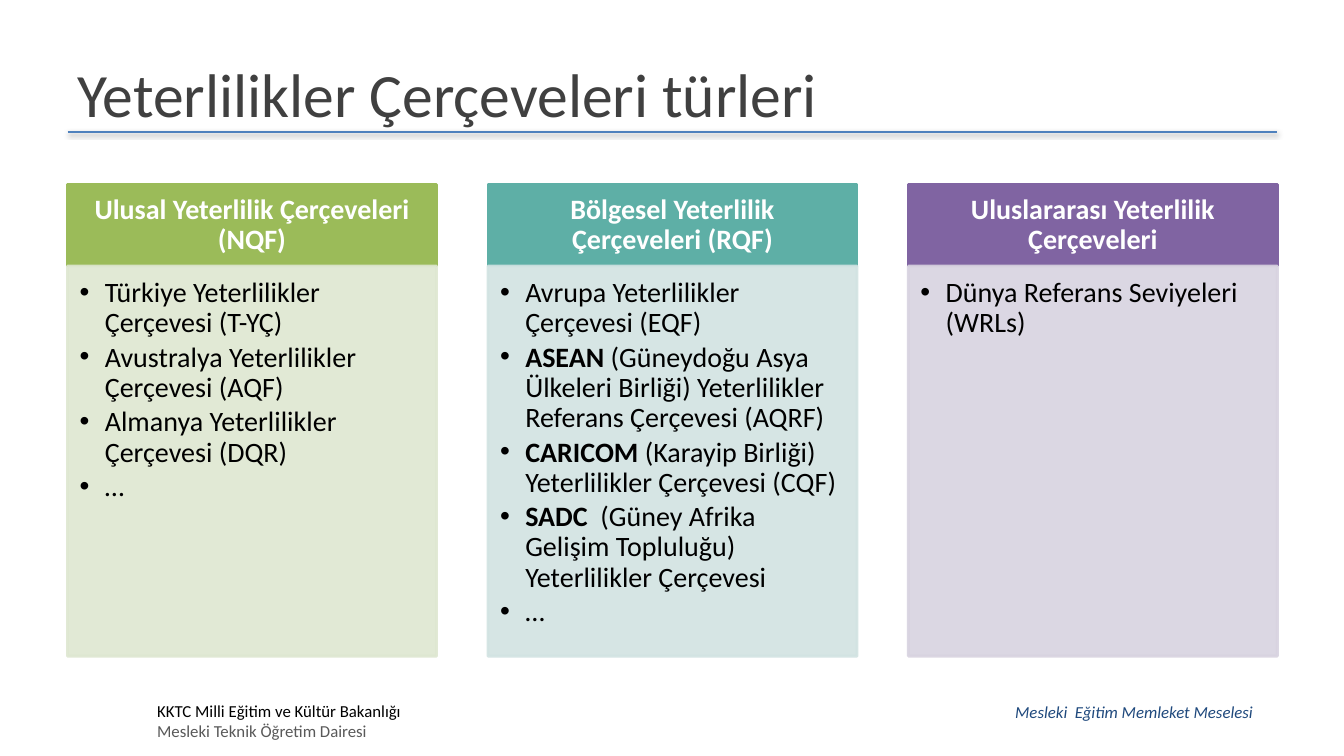
from dataclasses import dataclass

from lxml.etree import SubElement as sub
from pptx import Presentation
from pptx.dml.color import RGBColor as RGB
from pptx.enum.shapes import MSO_CONNECTOR as LINE, MSO_SHAPE as FORM
from pptx.enum.text import MSO_ANCHOR as ANCHOR, MSO_AUTO_SIZE as AUTO, PP_ALIGN as ALIGN
from pptx.oxml.ns import qn
from pptx.util import Emu, Inches, Pt

FONT = "Calibri"
HUES = {
    "title": "404040", "rule": "4F81BD", "motto": "1F497D",
    "black": "000000", "grey": "595959", "white": "FFFFFF",
    "green": "9BBB59", "pale green": "DEE7D1",
    "teal": "5EAFA6", "pale teal": "D2E3E2",
    "violet": "8064A2", "pale violet": "D8D3E0",
}

# Grid: three columns, a head row over a body row
LEFT, WIDE, STEP = 0.67, 3.66, 4.17
TOP, HEAD, BODY = 1.83, 0.81, 3.87


@dataclass
class Group:
    hue: str
    head: str
    items: list[str]  # the part before "|" is bold


@dataclass
class Note:
    box: tuple[float, float, float, float]
    lines: list[tuple[str, str]]  # text, colour
    slant: bool = False


GROUPS = [
    Group("green", "Ulusal Yeterlilik Çerçeveleri (NQF)", [
        "Türkiye Yeterlilikler Çerçevesi (T-YÇ)",
        "Avustralya Yeterlilikler Çerçevesi (AQF)",
        "Almanya Yeterlilikler Çerçevesi (DQR)",
        "…",
    ]),
    Group("teal", "Bölgesel Yeterlilik Çerçeveleri (RQF)", [
        "Avrupa Yeterlilikler Çerçevesi (EQF)",
        "ASEAN| (Güneydoğu Asya Ülkeleri Birliği) Yeterlilikler Referans Çerçevesi (AQRF)",
        "CARICOM| (Karayip Birliği) Yeterlilikler Çerçevesi (CQF)",
        "SADC  |(Güney Afrika Gelişim Topluluğu) Yeterlilikler Çerçevesi",
        "…",
    ]),
    Group("violet", "Uluslararası Yeterlilik Çerçeveleri", [
        "Dünya Referans Seviyeleri (WRLs)",
    ]),
]
NOTES = [
    Note((9.97, 6.91, 2.75, 0.3), [("Mesleki  Eğitim Memleket Meselesi", "motto")], True),
    Note((1.46, 6.9, 3.79, 0.5), [("KKTC Milli Eğitim ve Kültür Bakanlığı", "black"),
                                  ("Mesleki Teknik Öğretim Dairesi", "grey")]),
]


def color(name: str) -> RGB:
    return RGB.from_string(HUES[name])


def style(font, size: float, hue: str, bold: bool = False, slant: bool = False) -> None:
    font.name, font.size, font.bold, font.italic = FONT, Pt(size), bold, slant
    font.color.rgb = color(hue)


def panel(slide, box: tuple, hue: str, pads: tuple, alpha: int = 100):
    """Draw a filled rectangle and return it."""
    shape = slide.shapes.add_shape(FORM.RECTANGLE, *map(Inches, box))
    shape.shadow.inherit = False
    shape.line.width = Pt(2)
    for fill in (shape.fill, shape.line.fill):
        fill.solid()
        fill.fore_color.rgb = color(hue)
    if alpha < 100:
        for tone in shape._element.spPr.iter(qn("a:srgbClr")):
            sub(tone, qn("a:alpha"), val=str(alpha * 1000))
    frame = shape.text_frame
    frame.word_wrap = True
    (frame.margin_left, frame.margin_top,
     frame.margin_right, frame.margin_bottom) = map(Inches, pads)
    return shape


def bullet(para, item: str) -> None:
    props = para._p.get_or_add_pPr()
    props.set("marL", str(Inches(0.25)))
    props.set("indent", str(-Inches(0.25)))
    sub(props, qn("a:buFont"), typeface="Arial")
    sub(props, qn("a:buChar"), char="•")
    para.alignment, para.line_spacing, para.space_after = ALIGN.LEFT, 0.9, Pt(3)
    lead, _, rest = item.rpartition("|")
    for text, bold in ((lead, True), (rest, False)):
        if text:
            run = para.add_run()
            run.text = text
            style(run.font, 20, "black", bold)


def column(slide, at: int, group: Group) -> None:
    left = LEFT + at * STEP
    # Head
    head = panel(slide, (left, TOP, WIDE, HEAD), group.hue, (0.16, 0.09, 0.16, 0.09))
    frame = head.text_frame
    frame.vertical_anchor = ANCHOR.MIDDLE
    frame.text = group.head
    para = frame.paragraphs[0]
    para.alignment, para.line_spacing = ALIGN.CENTER, 0.9
    style(para.runs[0].font, 20, "white", True)
    # Body
    body = panel(slide, (left, TOP + HEAD, WIDE, BODY), f"pale {group.hue}",
                 (0.12, 0.12, 0.16, 0.17), 90)
    frame = body.text_frame
    frame.vertical_anchor = ANCHOR.TOP
    for i, item in enumerate(group.items):
        bullet(frame.add_paragraph() if i else frame.paragraphs[0], item)


def rule(slide) -> None:
    ends = map(Inches, (LEFT, 1.31, LEFT + 2 * STEP + WIDE, 1.31))
    line = slide.shapes.add_connector(LINE.STRAIGHT, *ends)
    line.line.width = Pt(2)
    line.line.color.rgb = color("rule")
    # Soft shadow below the line
    glow = sub(sub(line._element.spPr, qn("a:effectLst")), qn("a:outerShdw"),
               blurRad=str(Pt(3.1)), dist=str(Pt(1.6)), dir="5400000", rotWithShape="0")
    tone = sub(glow, qn("a:srgbClr"), val=HUES["black"])
    sub(tone, qn("a:alpha"), val="38000")


def label(slide, note: Note) -> None:
    frame = slide.shapes.add_textbox(*map(Inches, note.box)).text_frame
    frame.word_wrap = True
    frame.auto_size = AUTO.SHAPE_TO_FIT_TEXT
    frame.text = "\n".join(text for text, _ in note.lines)
    for para, (_, hue) in zip(frame.paragraphs, note.lines):
        style(para.runs[0].font, 12, hue, slant=note.slant)


def main() -> None:
    deck = Presentation()
    deck.slide_width, deck.slide_height = Inches(13.33), Inches(7.5)
    slide = deck.slides.add_slide(deck.slide_layouts[5])

    # Title, centred in 90 % of the slide's width
    title = slide.shapes.title
    title.left, title.width = Emu(int(deck.slide_width * 0.05)), Emu(int(deck.slide_width * 0.9))
    title.top, title.height = Inches(0.3), Inches(1.25)
    frame = title.text_frame
    frame.text = "Yeterlilikler Çerçeveleri türleri"
    frame.vertical_anchor = ANCHOR.MIDDLE
    frame.paragraphs[0].alignment = ALIGN.LEFT
    style(frame.paragraphs[0].runs[0].font, 44, "title")
    rule(slide)

    # Columns and footer
    for at, group in enumerate(GROUPS):
        column(slide, at, group)
    for note in NOTES:
        label(slide, note)
    deck.save("out.pptx")


if __name__ == "__main__":
    main()
